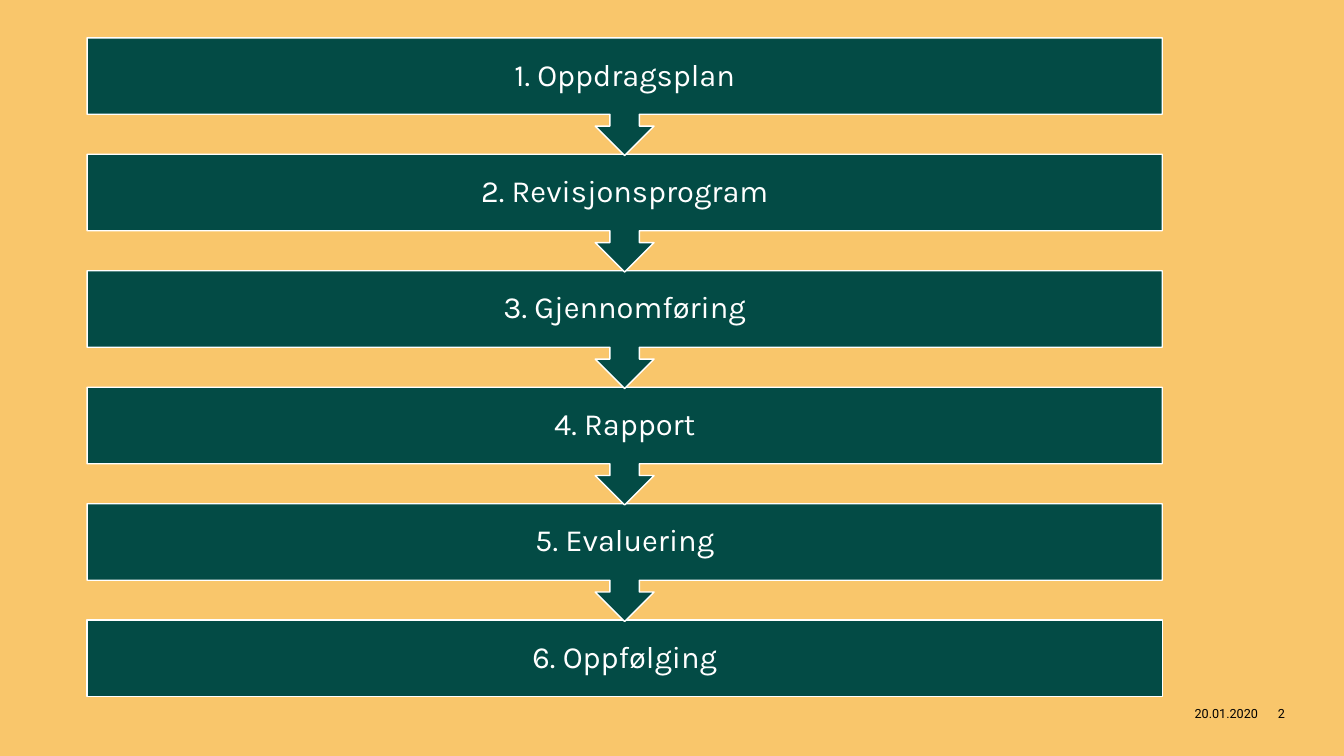
from pptx import Presentation
from pptx.dml.color import RGBColor
from pptx.enum.shapes import MSO_SHAPE as Shape
from pptx.enum.text import MSO_ANCHOR as Anchor, PP_ALIGN as Align
from pptx.util import Pt

AMBER = RGBColor(0xF9, 0xC6, 0x6B)
GREEN = RGBColor(0x03, 0x4B, 0x45)
WHITE = RGBColor(0xFF, 0xFF, 0xFF)
BLACK = RGBColor(0x00, 0x00, 0x00)

STEPS = ["Oppdragsplan", "Revisjonsprogram", "Gjennomføring",
         "Rapport", "Evaluering", "Oppfølging"]
STEP_PITCH = 83.2
BAR_HEIGHT = 54.7
CALLOUT_HEIGHT = 84.1
BAR_INSET = Pt(12.24)


def add_step(slide, kind, label, left, top, width, height):
    step = slide.shapes.add_shape(kind, Pt(left), Pt(top), Pt(width), Pt(height))
    step.shadow.inherit = False
    step.fill.solid()
    step.fill.fore_color.rgb = GREEN
    step.line.color.rgb = WHITE
    step.line.width = Pt(1)
    frame = step.text_frame
    frame.word_wrap = True
    frame.vertical_anchor = Anchor.MIDDLE
    frame.margin_left = frame.margin_right = BAR_INSET
    frame.margin_top = frame.margin_bottom = BAR_INSET
    paragraph = frame.paragraphs[0]
    paragraph.text = label
    paragraph.alignment = Align.CENTER
    paragraph.line_spacing = 0.9
    paragraph.font.name = "Karla"
    paragraph.font.size = Pt(22)
    paragraph.font.color.rgb = WHITE


def add_process(slide, left, top, width):
    """Stack the steps from the bottom up, so each arrow lies over the next bar."""
    last = len(STEPS) - 1
    for index in range(last, -1, -1):
        if index == last:
            kind, height = Shape.RECTANGLE, BAR_HEIGHT
        else:
            kind, height = Shape.DOWN_ARROW_CALLOUT, CALLOUT_HEIGHT
        add_step(slide, kind, f"{index + 1}. {STEPS[index]}",
                 left, top + index * STEP_PITCH, width, height)


def add_footer(slide, left, top, height):
    date_width, number_width = 105.6, 54.4
    fields = [("20.01.2020", left, date_width, Align.RIGHT),
              ("2", left + date_width, number_width, Align.LEFT)]
    for text, field_left, width, alignment in fields:
        field = slide.shapes.add_textbox(Pt(field_left), Pt(top), Pt(width), Pt(height))
        frame = field.text_frame
        frame.word_wrap = True
        frame.vertical_anchor = Anchor.MIDDLE
        paragraph = frame.paragraphs[0]
        paragraph.text = text
        paragraph.alignment = alignment
        paragraph.font.name = "Roboto"
        paragraph.font.size = Pt(9)
        paragraph.font.color.rgb = BLACK


def main():
    deck = Presentation()
    deck.slide_width, deck.slide_height = Pt(960), Pt(540)
    slide = deck.slides.add_slide(deck.slide_layouts[6])
    slide.background.fill.solid()
    slide.background.fill.fore_color.rgb = AMBER
    add_footer(slide, 800, 495.4, 28.8)
    add_process(slide, 62.2, 27, 768)
    deck.save("out.pptx")


if __name__ == "__main__":
    main()
